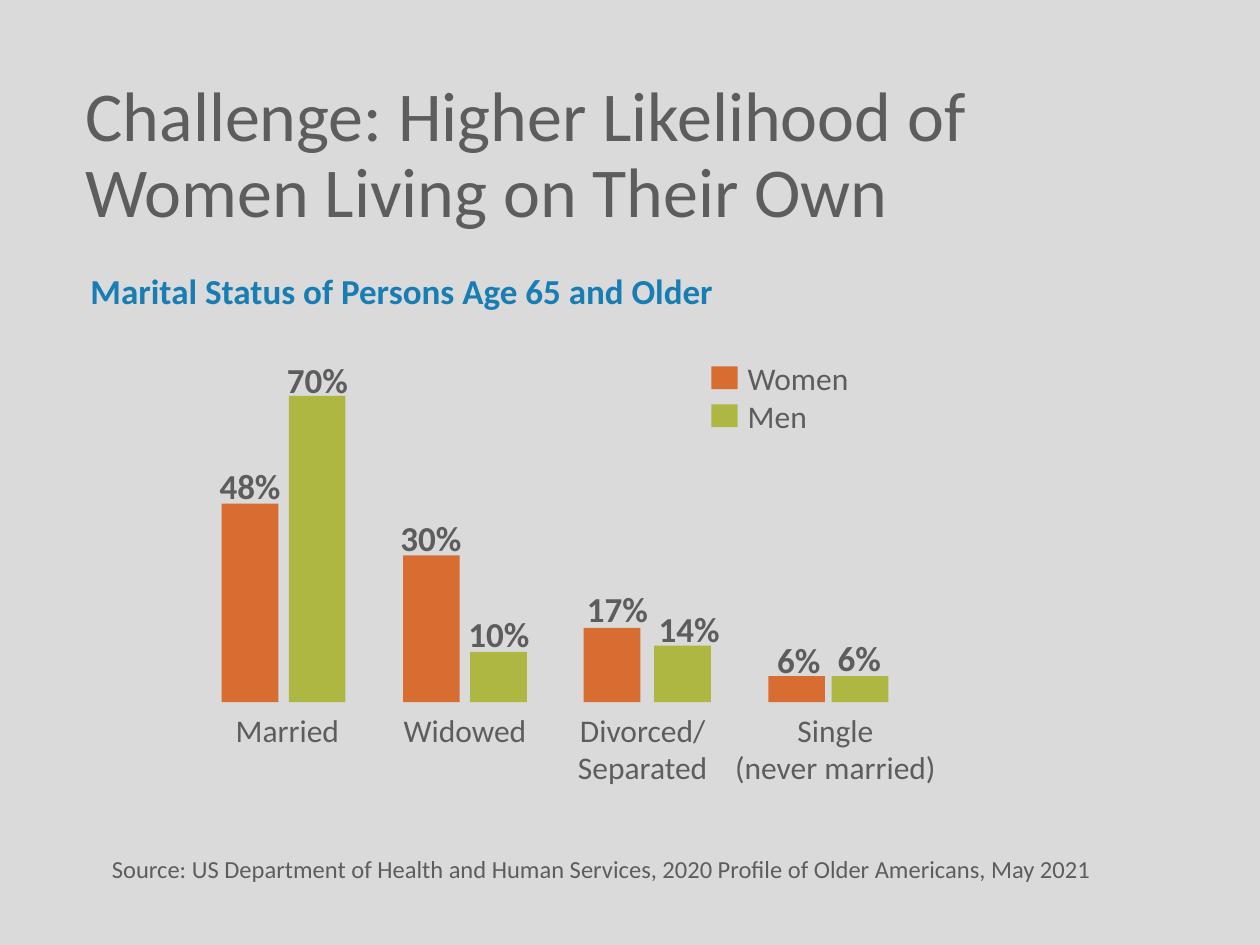
from pptx import Presentation
from pptx.dml.color import RGBColor
from pptx.enum.shapes import MSO_SHAPE
from pptx.enum.text import MSO_ANCHOR, PP_ALIGN
from pptx.util import Pt

COLORS = {
    "background": "DADADA",
    "text": "5D5D5D",
    "heading": "177DB3",
    "Women": "D76D31",
    "Men": "AFB743",
}

TITLE = "Challenge: Higher Likelihood of \vWomen Living on Their Own"
HEADING = "Marital Status of Persons Age 65 and Older"
SOURCE = ("Source: US Department of Health and Human Services, "
          "2020 Profile of Older Americans, May 2021")

# name, center
CATEGORIES = [
    ("Married", 164.2),
    ("Widowed", 265.7),
    ("Divorced/\vSeparated", 367.2),
    ("Single\v(never married)", 477.4),
]

# percent, bar left, bar height, label center, label top
BARS = {
    "Women": [
        (48, 126.7, 113.5, 142.9, 262.1),
        (30, 230.3, 84, 246.2, 291.6),
        (17, 333.5, 42.5, 352.8, 331.9),
        (6, 439, 15, 456.5, 361.4),
    ],
    "Men": [
        (70, 165, 175, 181.4, 201.6),
        (10, 268.7, 28.8, 285.1, 346.3),
        (14, 373.8, 32.4, 393.8, 343.4),
        (6, 475.2, 15, 491, 360),
    ],
}

BASELINE = 401.3
BAR_WIDTH = 32.4
LABEL_WIDTH = 60
CATEGORY_TOP = 402.5
CATEGORY_WIDTH = 132
KEY_LEFT, KEY_TOP, KEY_STEP = 406.5, 209.3, 21.8


def color(name):
    return RGBColor.from_string(COLORS[name])


def add_text(slide, text, left, top, width, height, size=18, bold=False,
             fill="text", align=PP_ALIGN.LEFT, anchor=MSO_ANCHOR.TOP, spacing=1.0):
    sp = slide.shapes.add_textbox(Pt(left), Pt(top), Pt(width), Pt(height))
    tf = sp.text_frame
    tf.word_wrap = True
    tf.vertical_anchor = anchor
    tf.text = text
    for p in tf.paragraphs:
        p.alignment = align
        p.line_spacing = spacing
        for r in p.runs:
            r.font.name = "Calibri"
            r.font.size = Pt(size)
            r.font.bold = bold
            r.font.color.rgb = color(fill)


def add_rect(slide, left, top, width, height, fill):
    sp = slide.shapes.add_shape(
        MSO_SHAPE.RECTANGLE, Pt(left), Pt(top), Pt(width), Pt(height))
    sp.shadow.inherit = False
    sp.fill.solid()
    sp.fill.fore_color.rgb = color(fill)
    sp.line.fill.background()


def main():
    prs = Presentation()
    prs.slide_width, prs.slide_height = Pt(720), Pt(540)
    slide = prs.slides.add_slide(prs.slide_layouts[6])
    slide.background.fill.solid()
    slide.background.fill.fore_color.rgb = color("background")

    add_text(slide, TITLE, 41.8, 41.8, 575.3, 95.8, size=40,
             anchor=MSO_ANCHOR.MIDDLE, spacing=0.9)
    add_text(slide, HEADING, 44.6, 150.5, 383, 31.7, size=20, bold=True, fill="heading")
    add_text(slide, SOURCE, 56.9, 484.6, 612, 24.5, size=14)

    for i, (series, bars) in enumerate(BARS.items()):
        add_rect(slide, KEY_LEFT, KEY_TOP + i * KEY_STEP, 15.1, 13, series)
        for percent, left, height, center, top in bars:
            add_rect(slide, left, BASELINE - height, BAR_WIDTH, height, series)
            add_text(slide, f"{percent}%", center - LABEL_WIDTH / 2, top, LABEL_WIDTH, 31.7,
                     size=20, bold=True, align=PP_ALIGN.CENTER)
    add_text(slide, "\n".join(BARS), 420.2, 201.6, 100.8, 51.1)

    for name, center in CATEGORIES:
        add_text(slide, name, center - CATEGORY_WIDTH / 2, CATEGORY_TOP, CATEGORY_WIDTH,
                 29 + 22 * name.count("\v"), align=PP_ALIGN.CENTER)

    prs.save("out.pptx")


if __name__ == "__main__":
    main()
